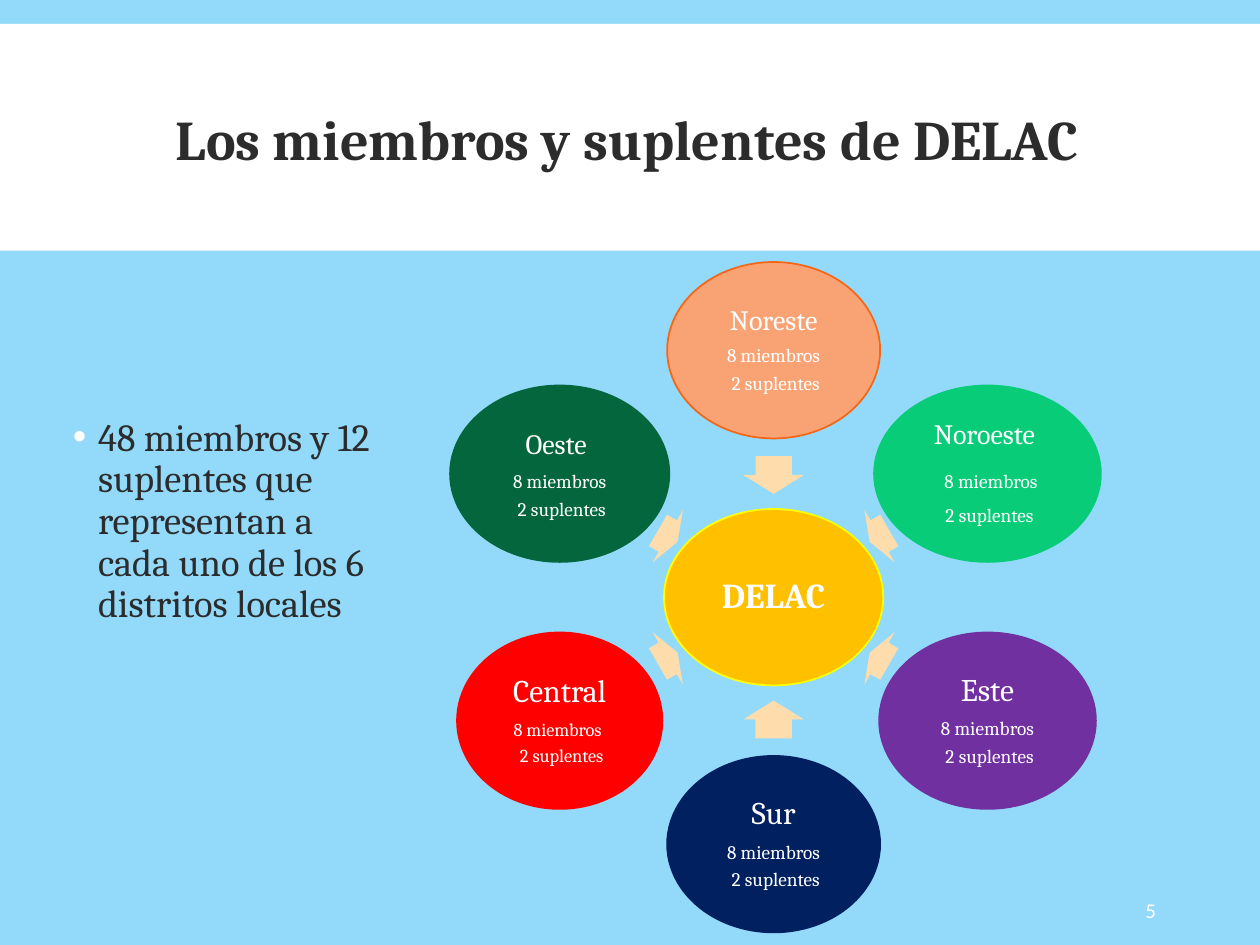
from dataclasses import dataclass
from math import cos, radians, sin

from lxml import etree
from pptx import Presentation
from pptx.dml.color import RGBColor
from pptx.enum import shapes, text
from pptx.oxml.ns import qn
from pptx.util import Inches, Pt


@dataclass(frozen=True)
class Theme:
    sky: str = "93DAFA"
    white: str = "FFFFFF"
    ink: str = "2C2C2C"
    arrow: str = "FFDCAB"
    gold: str = "FFC000"
    rim: str = "FFFF00"
    serif: str = "Cambria"
    sans: str = "Calibri"
    title: float = 32
    body: float = 22
    hub: float = 20
    large: float = 18
    mid: float = 16
    small: float = 11
    tiny: float = 10.5
    page: float = 12


@dataclass(frozen=True)
class Run:
    words: str
    size: float
    color: str = Theme.white
    face: str = Theme.serif
    bold: bool = False


@dataclass(frozen=True)
class Node:
    lines: list
    width: float
    fill: str
    rim: str
    inset: float = 0.03


T = Theme()
HUB = (6.14, 4.74)
RING, MIDWAY = 1.96, 0.97  # distances of nodes and arrows from the hub
TALL = 1.4
STEP = 60
CENTER = text.PP_ALIGN.CENTER
MIDDLE = text.MSO_ANCHOR.MIDDLE


def rgb(code: str) -> RGBColor:
    return RGBColor.from_string(code)


def apply(item, values: dict) -> None:
    for name, value in values.items():
        setattr(item, name, value)


def write(frame, lines: list, form: dict, box: dict) -> None:
    """Fill a text frame; each line is a list of runs."""
    apply(frame, {"word_wrap": True, **box})
    for i, line in enumerate(lines):
        para = frame.paragraphs[0] if i == 0 else frame.add_paragraph()
        apply(para, form)
        for part in line:
            run = para.add_run()
            run.text = part.words
            apply(run.font, {"size": Pt(part.size), "name": part.face,
                             "bold": part.bold})
            run.font.color.rgb = rgb(part.color)


def label(slide, at: tuple, part: Run, form: dict, box: dict):
    area = slide.shapes.add_textbox(*map(Inches, at))
    write(area.text_frame, [[part]], form, box)
    return area.text_frame.paragraphs[0]


def shape(slide, kind, mid: tuple, size: tuple, fill: str, rim: str = ""):
    """Draw a preset shape around its middle point."""
    at = [m - s / 2 for m, s in zip(mid, size)]
    item = slide.shapes.add_shape(kind, *map(Inches, (*at, *size)))
    item.shadow.inherit = False
    item.fill.solid()
    item.fill.fore_color.rgb = rgb(fill)
    if rim:
        item.line.color.rgb = rgb(rim)
        item.line.width = Pt(1)
    else:
        item.line.fill.background()
    return item


def orbit(turn: float, reach: float) -> tuple:
    """Point at a clockwise angle from the top of the hub."""
    a = radians(turn)
    return HUB[0] + reach * sin(a), HUB[1] - reach * cos(a)


def bubble(slide, node: Node, mid: tuple) -> None:
    item = shape(slide, shapes.MSO_SHAPE.OVAL, mid, (node.width, TALL),
                 node.fill, node.rim)
    sides = ("left", "right", "top", "bottom")
    box = {f"margin_{s}": Inches(node.inset) for s in sides}
    write(item.text_frame, node.lines,
          {"alignment": CENTER, "line_spacing": 0.9},
          {"vertical_anchor": MIDDLE, **box})
    # Space after each line, relative to its size
    for para in item.text_frame.paragraphs:
        para.space_after = Pt(0)
        gap = para._p.pPr.find(qn("a:spcAft"))
        gap.remove(gap[0])
        etree.SubElement(gap, qn("a:spcPct")).set("val", "35000")


def arrow(slide, turn: float) -> None:
    long = 0.3 if turn % 180 == 0 else 0.18
    item = shape(slide, shapes.MSO_SHAPE.RIGHT_ARROW, orbit(turn, MIDWAY),
                 (long, 0.48), T.arrow)
    item.adjustments[0], item.adjustments[1] = 0.6, 0.5
    item.rotation = (turn + 90) % 360


def bullet(para) -> None:
    props = para._p.get_or_add_pPr()
    props.set("marL", str(Inches(0.2)))
    props.set("indent", str(-Inches(0.2)))
    tint = etree.SubElement(props, qn("a:buClr"))
    etree.SubElement(tint, qn("a:srgbClr")).set("val", T.white)
    etree.SubElement(props, qn("a:buFont")).set("typeface", "Arial")
    etree.SubElement(props, qn("a:buChar")).set("char", "•")


def main() -> None:
    deck = Presentation()
    deck.slide_width, deck.slide_height = Inches(10), Inches(7.5)
    slide = deck.slides.add_slide(deck.slide_layouts[6])
    slide.background.fill.solid()
    slide.background.fill.fore_color.rgb = rgb(T.sky)

    # Title band
    shape(slide, shapes.MSO_SHAPE.RECTANGLE, (5, 1.09), (10, 1.8), T.white)
    label(slide, (0.11, 0.31, 9.74, 1.65),
          Run("Los miembros y suplentes de DELAC", T.title, T.ink, bold=True),
          {"alignment": CENTER, "line_spacing": 0.85},
          {"vertical_anchor": MIDDLE})

    # Summary
    bullet(label(
        slide, (0.48, 3.27, 2.66, 2.43),
        Run("48 miembros y 12 suplentes que representan a cada uno de los "
            "6 distritos locales", T.body, T.ink),
        {"line_spacing": 0.9, "space_before": Pt(12), "space_after": Pt(2)},
        {}))

    # Hub and the districts, clockwise from the top
    seats = [Run("8 miembros", T.small)]
    subs = [Run(" 2 suplentes", T.small)]
    wide = Run(" ", T.large, face=T.sans)
    hub = Node([[Run("DELAC", T.hub, bold=True)]], 1.74, T.gold, T.rim)
    ring = [
        Node([[Run("Noreste", T.mid)], seats, subs],
             1.69, "F9A374", "F56617", 0.02),
        Node([[Run("Noroeste ", T.mid)], [wide, *seats], subs],
             1.8, "08CC78", "08CC78", 0.02),
        Node([[Run("Este", T.large)], seats, subs],
             1.72, "7030A0", "7030A0"),
        Node([[Run("Sur", T.large)], seats, subs],
             1.69, "002060", "002060"),
        Node([[Run("Central", T.large)], [Run("8 miembros ", T.tiny)],
              [Run(" 2 suplentes", T.tiny)]], 1.63, "FF0000", "FF0000"),
        Node([[Run("Oeste", T.mid), wide], seats, subs],
             1.74, "04663C", "04663C", 0.02),
    ]
    bubble(slide, hub, HUB)
    for i, node in enumerate(ring):
        arrow(slide, i * STEP)
        bubble(slide, node, orbit(i * STEP, RING))

    # Page number
    label(slide, (9.04, 7.02, 0.78, 0.4), Run("5", T.page, face=T.sans), {},
          {"vertical_anchor": MIDDLE, "margin_left": Inches(0.05)})

    deck.save("out.pptx")


if __name__ == "__main__":
    main()
